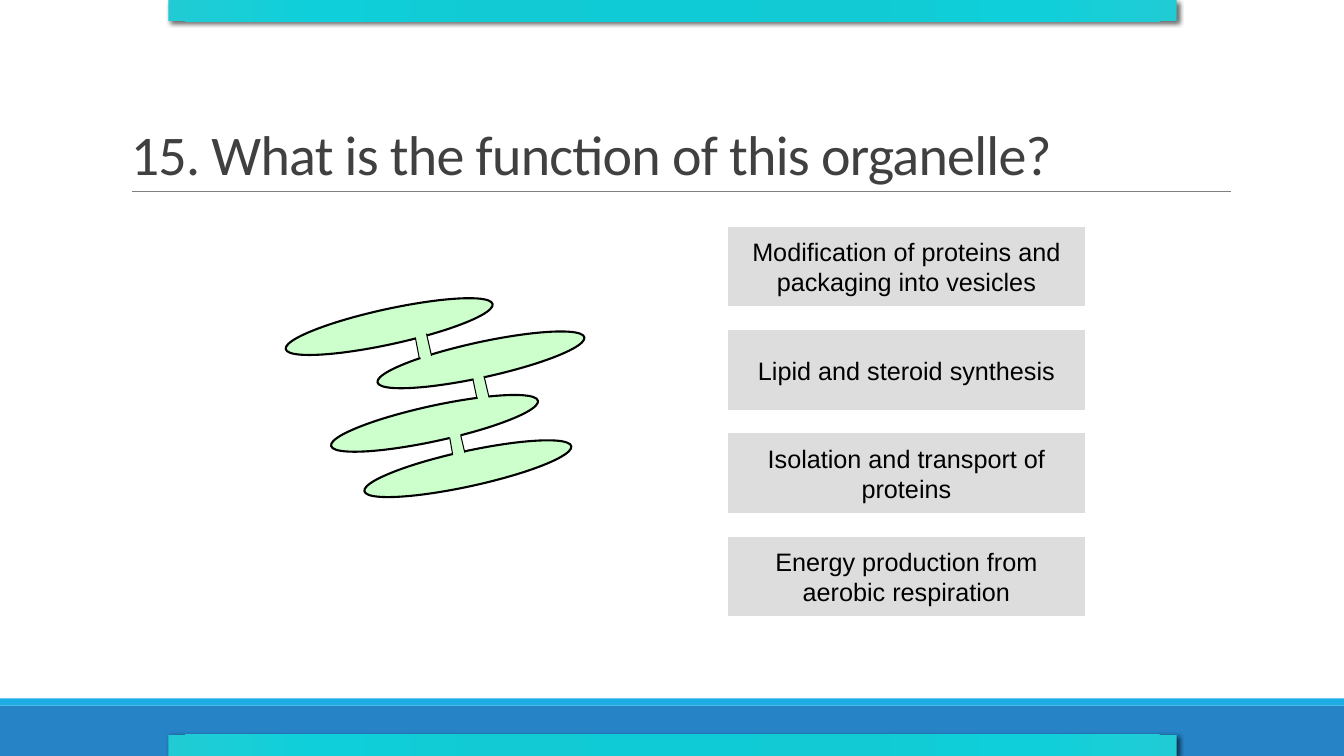
from lxml import etree
from pptx import Presentation
from pptx.dml.color import RGBColor
from pptx.enum import shapes, text
from pptx.oxml import parse_xml
from pptx.oxml.ns import nsdecls, qn
from pptx.util import Inches, Pt

TILT = 257.7
CISTERNAE = [(4.64, 4.65), (4.31, 4.2), (4.77, 3.57), (3.86, 3.24)]
LINKS = [(4.53, 4.41), (4.77, 3.84), (4.2, 3.43)]
LINK_EDGES = [
    (4.49, 4.51, 4.46, 4.34), (4.61, 4.49, 4.57, 4.32),
    (4.73, 3.95, 4.69, 3.76), (4.85, 3.94, 4.8, 3.73),
    (4.16, 3.56, 4.12, 3.35), (4.28, 3.53, 4.23, 3.31),
]
ANSWERS = [
    "Modification of proteins and packaging into vesicles",
    "Lipid and steroid synthesis",
    "Isolation and transport of proteins",
    "Energy production from aerobic respiration",
]
BAR_STOPS = [(0, "0ECBD5"), (34, "12CAD3"), (70, "0FD0DA"), (100, "20CBD4")]


def rgb(color):
    return RGBColor.from_string(color)


def add_box(parent, kind, left, top, width, height, fill=None, line=None):
    sp = parent.shapes.add_shape(
        kind, Inches(left), Inches(top), Inches(width), Inches(height))
    sp.shadow.inherit = False
    if fill:
        sp.fill.solid()
        sp.fill.fore_color.rgb = rgb(fill)
    if line:
        sp.line.color.rgb = rgb(line)
        sp.line.width = Pt(1.5)
    else:
        sp.line.fill.background()
    return sp


def add_line(parent, x1, y1, x2, y2, color, width):
    ln = parent.shapes.add_connector(
        shapes.MSO_CONNECTOR.STRAIGHT,
        Inches(x1), Inches(y1), Inches(x2), Inches(y2))
    ln.line.color.rgb = rgb(color)
    ln.line.width = Pt(width)
    etree.SubElement(ln._element.spPr, qn("a:effectLst"))


def add_ellipse(parent, center, width, height, line=None):
    x, y = center
    sp = add_box(parent, shapes.MSO_SHAPE.OVAL, x - width / 2, y - height / 2,
                 width, height, "CCFFCC", line)
    sp.rotation = TILT


def set_text(sp, words, font, size, color, anchor):
    tf = sp.text_frame
    tf.word_wrap = True
    tf.vertical_anchor = anchor
    p = tf.paragraphs[0]
    p.text = words
    r = p.runs[0]
    r.font.name = font
    r.font.size = Pt(size)
    r.font.color.rgb = rgb(color)
    return p


def add_title(s, words):
    sp = s.shapes.add_textbox(Inches(1.2), Inches(0.31), Inches(11), Inches(1.59))
    p = set_text(sp, words, "Calibri", 40, "404040", text.MSO_ANCHOR.BOTTOM)
    p.line_spacing = 0.85
    p.runs[0]._r.get_or_add_rPr().set("spc", "-50")


def add_answer(s, top, words):
    sp = add_box(s, shapes.MSO_SHAPE.ACTION_BUTTON_CUSTOM,
                 7.22, top, 3.54, 0.79, "DDDDDD")
    p = set_text(sp, words, "Arial", 18, "000000", text.MSO_ANCHOR.MIDDLE)
    p.alignment = text.PP_ALIGN.CENTER


def add_gradient_bar(s, top):
    """Turquoise bar with a radial gradient and a soft shadow."""
    sp = add_box(s, shapes.MSO_SHAPE.RECTANGLE, 1.67, top, 10, 0.21)
    stops = "".join(
        f'<a:gs pos="{pos * 1000}"><a:srgbClr val="{color}"/></a:gs>'
        for pos, color in BAR_STOPS)
    gradient = parse_xml(
        f'<a:gradFill {nsdecls("a")}><a:gsLst>{stops}</a:gsLst>'
        '<a:path path="circle"><a:fillToRect l="100000" t="100000" '
        'r="100000" b="100000"/></a:path></a:gradFill>')
    shadow = parse_xml(
        f'<a:outerShdw {nsdecls("a")} blurRad="{Pt(3.5)}" dist="{Pt(2)}" '
        'dir="2700000" algn="tl" rotWithShape="0"><a:srgbClr val="000000">'
        '<a:alpha val="60000"/></a:srgbClr></a:outerShdw>')
    sp_pr = sp._element.spPr
    sp_pr.find(qn("a:prstGeom")).addnext(gradient)
    sp_pr.find(qn("a:effectLst")).append(shadow)


def add_organelle(s):
    group = s.shapes.add_group_shape()
    for center in CISTERNAE:
        add_ellipse(group, center, 0.35, 2.1, "000000")
    for center in LINKS:
        add_ellipse(group, center, 0.52, 0.12)
    for edge in LINK_EDGES:
        add_line(group, *edge, "000000", 0.75)


def main():
    prs = Presentation()
    prs.slide_width, prs.slide_height = Inches(13.33), Inches(7.5)
    s = prs.slides.add_slide(prs.slide_layouts[6])
    add_box(s, shapes.MSO_SHAPE.RECTANGLE, 0, 7, 13.33, 0.5, "2683C6")
    add_box(s, shapes.MSO_SHAPE.RECTANGLE, 0, 6.93, 13.33, 0.07, "1CADE4")
    add_line(s, 1.31, 1.9, 12.21, 1.9, "808080", 0.5)
    add_title(s, "15. What is the function of this organelle?")
    add_organelle(s)
    for i, words in enumerate(ANSWERS):
        add_answer(s, 2.25 + i * 1.025, words)
    for top in (0, 7.29):
        add_gradient_bar(s, top)
    prs.save("out.pptx")


if __name__ == "__main__":
    main()
